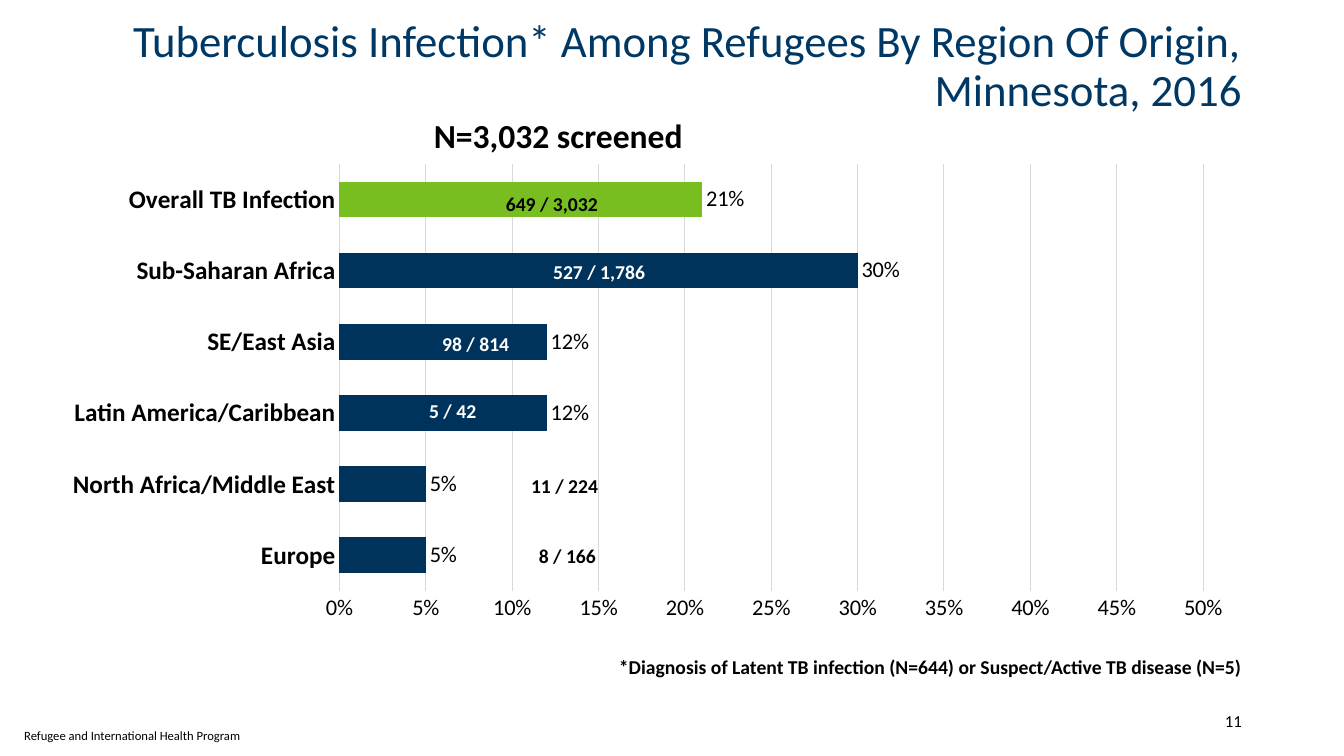
from lxml.etree import SubElement
from pptx import Presentation
from pptx.chart.data import CategoryChartData
from pptx.dml.color import RGBColor
from pptx.enum.chart import XL_CHART_TYPE, XL_LABEL_POSITION, XL_TICK_MARK
from pptx.enum.dml import MSO_LINE
from pptx.enum.text import MSO_ANCHOR, PP_ALIGN
from pptx.oxml.ns import qn
from pptx.util import Cm, Pt

BLACK = RGBColor(0x00, 0x00, 0x00)
WHITE = RGBColor(0xFF, 0xFF, 0xFF)
TITLE_BLUE = RGBColor(0x00, 0x38, 0x65)
BAR_BLUE = RGBColor(0x00, 0x33, 0x5C)
OVERALL_GREEN = RGBColor(0x78, 0xBE, 0x21)
GRID_GREY = RGBColor(0xD9, 0xD9, 0xD9)
FONT = "Calibri"

# Region and share infected, from the bottom bar up
INFECTION_RATES = [
    ("Europe", 0.05),
    ("North Africa/Middle East", 0.05),
    ("Latin America/Caribbean", 0.12),
    ("SE/East Asia", 0.12),
    ("Sub-Saharan Africa", 0.3),
    ("Overall TB Infection", 0.21),
]

# Infected / screened: text, left and top within the chart, width, colour, alignment
CASE_COUNTS = [
    ("649 / 3,032", 10.92, 0.83, 3.38, BLACK, PP_ALIGN.CENTER),
    ("527 / 1,786", 12.39, 2.54, 3.61, WHITE, PP_ALIGN.LEFT),
    ("98 / 814", 9.1, 4.34, 3.18, WHITE, PP_ALIGN.CENTER),
    ("5 / 42", 8.94, 6.04, 2.34, WHITE, PP_ALIGN.CENTER),
    ("11 / 224", 11.76, 7.92, 2.34, BLACK, PP_ALIGN.CENTER),
    ("8 / 166", 11.73, 9.7, 2.54, BLACK, PP_ALIGN.CENTER),
]


def style_font(font, size, color=BLACK, bold=False):
    font.name = FONT
    font.size = Pt(size)
    font.bold = bold
    font.color.rgb = color


def add_text(slide, text, box, size, color=BLACK, bold=False,
             align=PP_ALIGN.LEFT, anchor=MSO_ANCHOR.TOP, line_spacing=None):
    frame = slide.shapes.add_textbox(*(Cm(length) for length in box)).text_frame
    frame.word_wrap = True
    frame.vertical_anchor = anchor
    paragraph = frame.paragraphs[0]
    paragraph.alignment = align
    paragraph.line_spacing = line_spacing
    run = paragraph.add_run()
    run.text = text
    style_font(run.font, size, color, bold)


def fix_plot_area(chart, x, y, w, h):
    """Pin the inner plot area, as fractions of the chart."""
    plot_area = chart._chartSpace.chart.plotArea
    for old_layout in plot_area.findall(qn("c:layout")):
        plot_area.remove(old_layout)
    layout = SubElement(plot_area, qn("c:layout"))
    plot_area.insert(0, layout)
    manual = SubElement(layout, qn("c:manualLayout"))
    settings = {"layoutTarget": "inner", "xMode": "edge", "yMode": "edge",
                "x": x, "y": y, "w": w, "h": h}
    for tag, value in settings.items():
        SubElement(manual, qn(f"c:{tag}")).set("val", str(value))


def format_axes(chart):
    regions = chart.category_axis
    style_font(regions.tick_labels.font, 18, bold=True)
    regions.format.line.color.rgb = GRID_GREY
    regions.format.line.width = Pt(0.75)

    rates = chart.value_axis
    rates.minimum_scale, rates.maximum_scale, rates.major_unit = 0, 0.5, 0.05
    rates.tick_labels.number_format = "0%"
    rates.tick_labels.number_format_is_linked = False
    style_font(rates.tick_labels.font, 16)
    rates.format.line.fill.background()
    rates.has_major_gridlines = True
    grid = rates.major_gridlines.format.line
    grid.color.rgb = GRID_GREY
    grid.width = Pt(0.75)
    grid.dash_style = MSO_LINE.SOLID

    for axis in (regions, rates):
        axis.major_tick_mark = axis.minor_tick_mark = XL_TICK_MARK.NONE


def format_bars(chart):
    plot = chart.plots[0]
    plot.gap_width = 100
    plot.vary_by_categories = False
    bars = plot.series[0]
    bars.invert_if_negative = False
    bars.format.fill.solid()
    bars.format.fill.fore_color.rgb = BAR_BLUE
    overall = bars.points[len(INFECTION_RATES) - 1].format.fill
    overall.solid()
    overall.fore_color.rgb = OVERALL_GREEN

    labels = bars.data_labels
    labels.show_value = True
    labels.number_format = "0%"
    labels.number_format_is_linked = False
    labels.position = XL_LABEL_POSITION.OUTSIDE_END
    style_font(labels.font, 16)


def add_header(slide, left, top, width):
    add_text(slide, "Tuberculosis Infection* Among Refugees By Region Of Origin, "
             "Minnesota, 2016", (left, top, width, 2.54), 32, TITLE_BLUE,
             align=PP_ALIGN.RIGHT, anchor=MSO_ANCHOR.MIDDLE, line_spacing=0.9)
    add_text(slide, "N=3,032 screened", (left + 4.11, top + 2.34, 15.24, 1.3), 24,
             bold=True, align=PP_ALIGN.CENTER)


def add_infection_chart(slide, left, top, width, height):
    rates = CategoryChartData(number_format="0%")
    rates.categories = [region for region, _ in INFECTION_RATES]
    rates.add_series("Series 1", [rate for _, rate in INFECTION_RATES])
    chart = slide.shapes.add_chart(
        XL_CHART_TYPE.BAR_CLUSTERED,
        Cm(left), Cm(top), Cm(width), Cm(height), rates).chart
    chart.has_title = False
    chart.has_legend = False
    style_font(chart.font, 10, TITLE_BLUE)
    format_axes(chart)
    format_bars(chart)
    fix_plot_area(chart, 0.24, 0.02, 0.72, 0.89)

    # Case counts over the bars
    for text, dx, dy, count_width, color, align in CASE_COUNTS:
        add_text(slide, text, (left + dx, top + dy, count_width, 0.84), 14, color,
                 bold=True, align=align)


def add_footer(slide, left, top, right):
    add_text(slide, "*Diagnosis of Latent TB infection (N=644) or Suspect/Active "
             "TB disease (N=5)", (right - 16.2, top, 16.2, 0.74), 14,
             bold=True, line_spacing=0.8)
    add_text(slide, "11", (right - 4.06, top + 1.17, 4.06, 1.02), 12,
             align=PP_ALIGN.RIGHT, anchor=MSO_ANCHOR.MIDDLE)
    add_text(slide, "Refugee and International Health Program",
             (left, top + 1.73, 6.2, 0.64), 9)


def main():
    deck = Presentation()
    deck.slide_width, deck.slide_height = Cm(33.87), Cm(19.05)
    slide = deck.slides.add_slide(deck.slide_layouts[6])
    add_header(slide, left=2.34, top=0.43, width=29.21)
    add_infection_chart(slide, left=1.3, top=3.89, width=30.23, height=12.09)
    add_footer(slide, left=0.36, top=16.48, right=31.55)
    deck.save("out.pptx")


if __name__ == "__main__":
    main()
